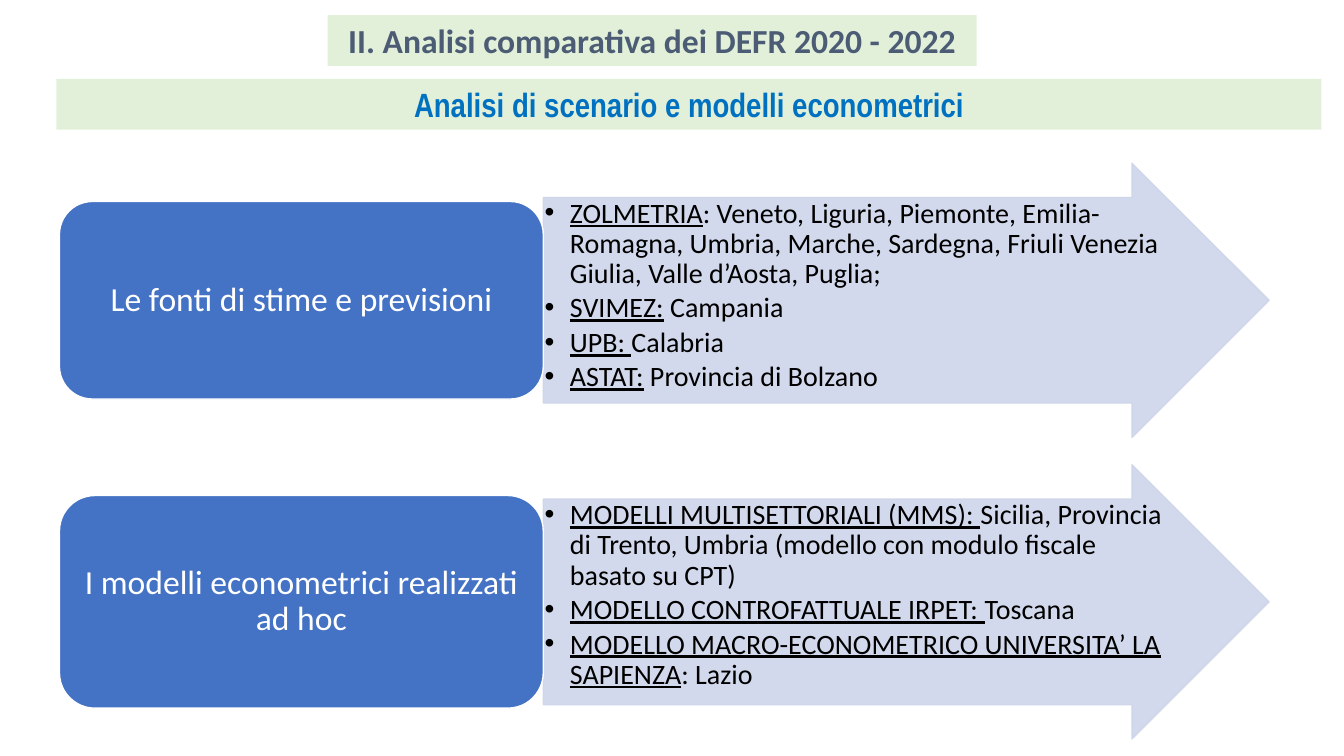
"""Build the slide on scenario analysis and econometric models in the DEFR."""
from lxml.etree import SubElement
from pptx import Presentation
from pptx.dml.color import RGBColor
from pptx.enum.shapes import MSO_SHAPE
from pptx.enum.text import MSO_ANCHOR, MSO_AUTO_SIZE, PP_ALIGN
from pptx.oxml.ns import qn
from pptx.util import Pt

COLORS = {"banner": "E2F0D9", "title": "4B5C74", "subtitle": "0070C0", "topic": "4472C4",
          "arrow": "CFD5EA", "white": "FFFFFF", "black": "000000"}

BANNERS = [
    ("II. Analisi comparativa dei DEFR 2020 - 2022", "Calibri", "title", (234, 10.8, 463.7, 36.2)),
    ("Analisi di scenario e modelli econometrici", "Arial Narrow", "subtitle", (40.3, 56.4, 903.6, 36.2)),
]

TOPICS = [
    ("Le fonti di stime e previsioni", 141.1, [
        ("ZOLMETRIA", ": Veneto, Liguria, Piemonte, Emilia-Romagna, Umbria, Marche, Sardegna, "
                      "Friuli Venezia Giulia, Valle d’Aosta, Puglia;"),
        ("SVIMEZ:", " Campania"),
        ("UPB: ", "Calabria"),
        ("ASTAT:", " Provincia di Bolzano"),
    ]),
    ("I modelli econometrici realizzati ad hoc", 151.9, [
        ("MODELLI MULTISETTORIALI (MMS): ", "Sicilia, Provincia di Trento, Umbria "
                                            "(modello con modulo fiscale basato su CPT)"),
        ("MODELLO CONTROFATTUALE IRPET: ", "Toscana"),
        ("MODELLO MACRO-ECONOMETRICO UNIVERSITA’ LA SAPIENZA", ": Lazio"),
    ]),
]

TOPIC_LEFT, TOPIC_WIDTH = 42.5, 345.6
ARROW_LEFT = TOPIC_LEFT + TOPIC_WIDTH
ARROW_TOP, ARROW_WIDTH, ARROW_HEIGHT = 116.6, 518.4, 195.8
ARROW_STEP = ARROW_HEIGHT * 1.1


def add_block(slide, kind, box, fill, line=None):
    block = slide.shapes.add_shape(kind, *[Pt(length) for length in box])
    block.shadow.inherit = False
    block.fill.solid()
    block.fill.fore_color.rgb = RGBColor.from_string(COLORS[fill])
    if line:
        block.line.color.rgb = RGBColor.from_string(COLORS[line])
        block.line.width = Pt(1)
    else:
        block.line.fill.background()
    block.text_frame.word_wrap = True
    return block


def add_text(paragraph, text, size, color, font="Calibri", bold=False, underline=False):
    run = paragraph.add_run()
    run.text = text
    run.font.size = Pt(size)
    run.font.name = font
    run.font.bold = bold
    run.font.underline = underline
    run.font.color.rgb = RGBColor.from_string(COLORS[color])


def add_banner(slide, text, font, color, box):
    banner = add_block(slide, MSO_SHAPE.RECTANGLE, box, "banner")
    banner.text_frame.auto_size = MSO_AUTO_SIZE.SHAPE_TO_FIT_TEXT
    banner.text_frame.vertical_anchor = MSO_ANCHOR.TOP
    paragraph = banner.text_frame.paragraphs[0]
    paragraph.alignment = PP_ALIGN.CENTER
    add_text(paragraph, text, 24, color, font, bold=True)


def add_arrow(slide, top, details):
    arrow = add_block(slide, MSO_SHAPE.RIGHT_ARROW, (ARROW_LEFT, top, ARROW_WIDTH, ARROW_HEIGHT),
                      "arrow", "arrow")
    arrow.adjustments[0] = 0.75
    arrow.adjustments[1] = 0.5
    for tint in arrow._element.spPr.iter(qn("a:srgbClr")):
        SubElement(tint, qn("a:alpha"), val="90000")
    frame = arrow.text_frame
    frame.vertical_anchor = MSO_ANCHOR.TOP
    frame.margin_left = frame.margin_top = frame.margin_right = frame.margin_bottom = Pt(1)
    for index, (source, regions) in enumerate(details):
        paragraph = frame.add_paragraph() if index else frame.paragraphs[0]
        paragraph.alignment = PP_ALIGN.LEFT
        paragraph.level = 1
        paragraph.line_spacing = 0.9
        paragraph.space_after = Pt(3)
        properties = paragraph._p.get_or_add_pPr()
        properties.set("marL", str(Pt(18)))
        properties.set("indent", str(-Pt(18)))
        SubElement(properties, qn("a:buFont"), typeface="Arial")
        SubElement(properties, qn("a:buChar"), char="•")
        add_text(paragraph, source, 20, "black", underline=True)
        add_text(paragraph, regions, 20, "black")


def add_topic(slide, text, top, height):
    topic = add_block(slide, MSO_SHAPE.ROUNDED_RECTANGLE, (TOPIC_LEFT, top, TOPIC_WIDTH, height),
                      "topic", "white")
    topic.text_frame.vertical_anchor = MSO_ANCHOR.MIDDLE
    paragraph = topic.text_frame.paragraphs[0]
    paragraph.alignment = PP_ALIGN.CENTER
    paragraph.line_spacing = 0.9
    add_text(paragraph, text, 24, "white")


def main():
    deck = Presentation()
    deck.slide_width, deck.slide_height = Pt(960), Pt(540)
    slide = deck.slides.add_slide(deck.slide_layouts[6])
    for banner in BANNERS:
        add_banner(slide, *banner)
    for row, (text, height, details) in enumerate(TOPICS):
        top = ARROW_TOP + row * ARROW_STEP
        add_arrow(slide, top, details)
        add_topic(slide, text, top + (ARROW_HEIGHT - height) / 2, height)
    deck.save("out.pptx")


if __name__ == "__main__":
    main()
